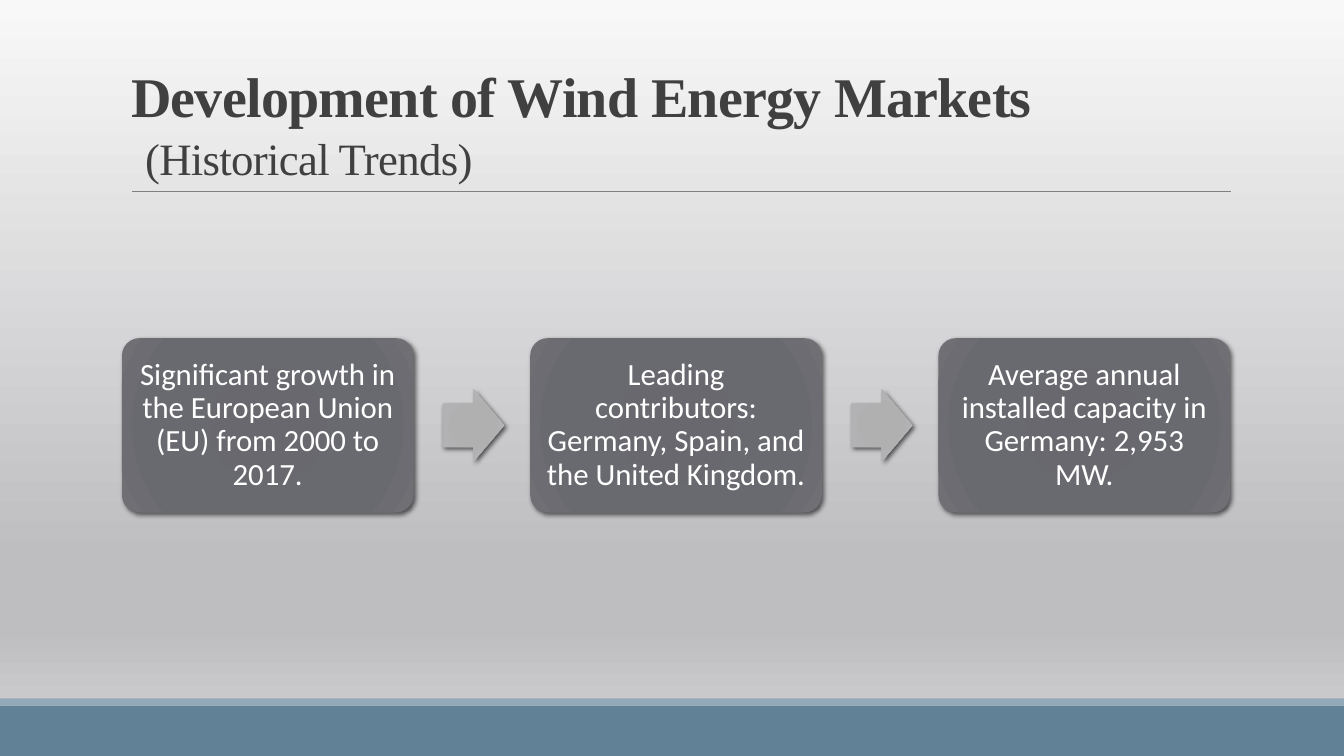
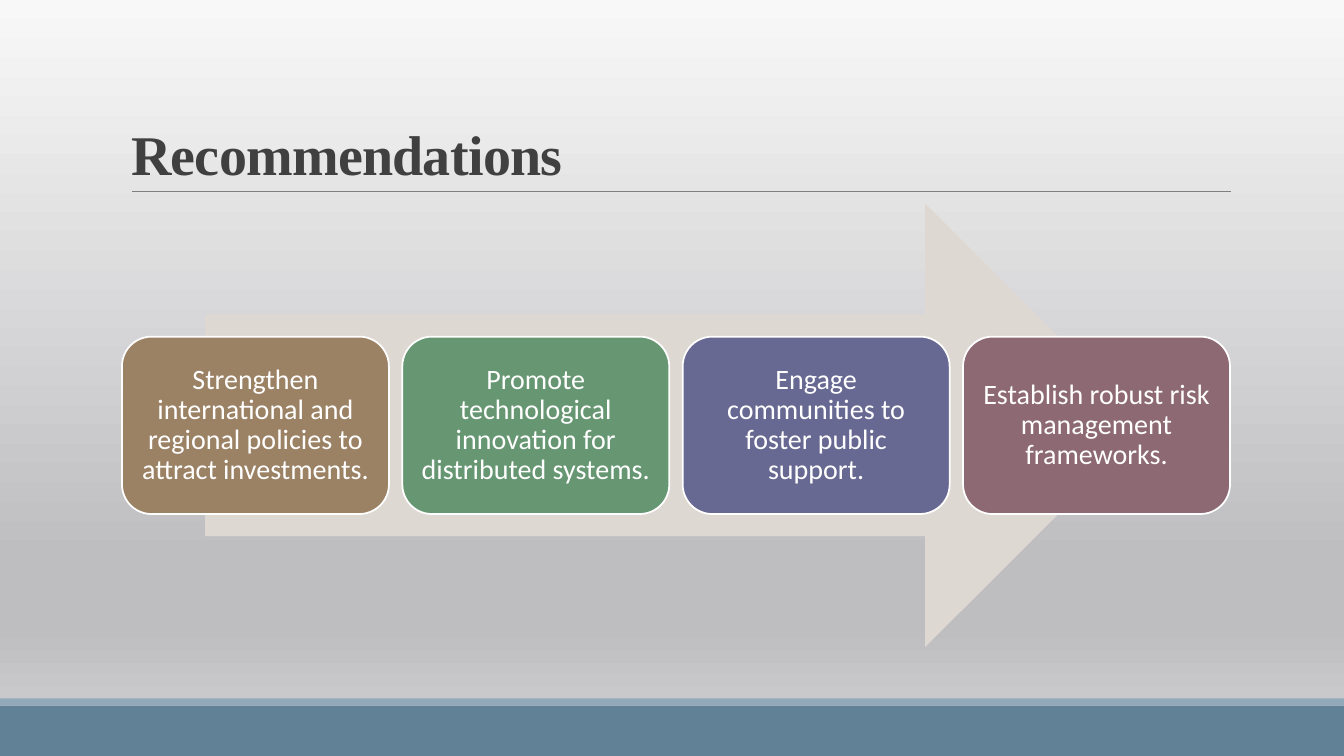
"""Build two wind energy slides: historical trends and recommendations."""
from pptx import Presentation
from pptx.dml.color import RGBColor
from pptx.enum.shapes import MSO_CONNECTOR as Connector, MSO_SHAPE as Shape
from pptx.enum.text import MSO_ANCHOR as Anchor, MSO_AUTO_SIZE as AutoSize, PP_ALIGN as Align
from pptx.oxml import parse_xml
from pptx.oxml.ns import nsdecls, qn
from pptx.util import Inches, Pt

WIDTH, HEIGHT = 13.33, 7.5
ROW_LEFT, ROW_WIDTH, ROW_MIDDLE = 1.21, 10.99, 4.22
COLORS = {
    "band": "618197", "stripe": "92A9B9", "rule": "808080", "title": "404040",
    "white": "FFFFFF", "big arrow": "DED8D3", "tan": "9C8265", "green": "669772",
    "violet": "686992", "plum": "8D6974",
}
PAGE_STOPS = {0: "F8F8F8", 74: "BEBEC1", 83: "BEBEC1", 100: "D4D4D5"}
STEP_STOPS = {0: "67676D", 34: "68686E", 70: "696970", 100: "6F6F74"}
ARROW_STOPS = {0: "AEAEB0", 34: "B0B0B1", 70: "B2B2B4", 100: "BBBBBC"}
DOWNWARD = f'<a:lin {nsdecls("a")} ang="5400000" scaled="0"/>'
RADIAL = (f'<a:path {nsdecls("a")} path="circle">'
          '<a:fillToRect l="100000" t="100000" r="100000" b="100000"/></a:path>')
SHADOW = (f'<a:outerShdw {nsdecls("a")} blurRad="{Pt(3.5)}" dist="{Pt(2)}" dir="2700000" '
          'algn="tl" rotWithShape="0"><a:srgbClr val="000000"><a:alpha val="60000"/>'
          '</a:srgbClr></a:outerShdw>')
TITLE_STYLE = (f'<a:lvl1pPr {nsdecls("a")} algn="l"><a:lnSpc><a:spcPct val="85000"/></a:lnSpc>'
               '<a:defRPr sz="4000" b="1" spc="-50"><a:solidFill>'
               f'<a:srgbClr val="{COLORS["title"]}"/></a:solidFill>'
               '<a:latin typeface="Times New Roman"/></a:defRPr></a:lvl1pPr>')


def set_gradient(fill, owner, stops, shade):
    """Fill with colour stops, given as percent to hex."""
    fill.gradient()
    gradient = next(owner.iter(qn("a:gradFill")))
    gradient.clear()
    marks = "".join(f'<a:gs pos="{spot * 1000}"><a:srgbClr val="{color}"/></a:gs>'
                    for spot, color in stops.items())
    gradient.append(parse_xml(f'<a:gsLst {nsdecls("a")}>{marks}</a:gsLst>'))
    gradient.append(parse_xml(shade))


def add_block(page, kind, area, paint, text="", size=20, inset=0.08):
    """Add a shape with a plain colour, or a shaded one with a shadow."""
    box = page.shapes.add_shape(kind, *map(Inches, area))
    box.line.fill.background()
    box.shadow.inherit = False
    if isinstance(paint, dict):
        set_gradient(box.fill, box.element, paint, RADIAL)
        next(box.element.iter(qn("a:effectLst"))).append(parse_xml(SHADOW))
    else:
        box.fill.solid()
        box.fill.fore_color.rgb = RGBColor.from_string(paint)
    if text:
        frame, para = box.text_frame, box.text_frame.paragraphs[0]
        para.text = text
        margins = {f"margin_{side}": Inches(inset) for side in ("left", "top", "right", "bottom")}
        for target, values in (
            (frame, {"word_wrap": True, "vertical_anchor": Anchor.MIDDLE, **margins}),
            (para, {"alignment": Align.CENTER, "line_spacing": 0.9}),
            (para.font, {"name": "Calibri", "size": Pt(size)}),
        ):
            for name, value in values.items():
                setattr(target, name, value)
        para.font.color.rgb = RGBColor.from_string(COLORS["white"])
    return box


deck = Presentation()
deck.slide_width, deck.slide_height = Inches(WIDTH), Inches(HEIGHT)
layout = deck.slide_layouts[5]
for holder in list(layout.placeholders):
    if holder.placeholder_format.idx:
        holder.element.getparent().remove(holder.element)
layout_title = layout.placeholders[0]
for name, value in {"left": 1.2, "top": 0.31, "width": 11, "height": 1.59}.items():
    setattr(layout_title, name, Inches(value))
for name, value in {"vertical_anchor": Anchor.BOTTOM, "auto_size": AutoSize.NONE,
                    "word_wrap": True}.items():
    setattr(layout_title.text_frame, name, value)
next(layout_title.element.iter(qn("a:lstStyle"))).append(parse_xml(TITLE_STYLE))
set_gradient(layout.background.fill, layout.element, PAGE_STOPS, DOWNWARD)

trends, advice = [deck.slides.add_slide(layout) for _ in range(2)]

band = add_block(trends, Shape.RECTANGLE, (0, 7, WIDTH, 0.5), COLORS["band"])
stripe = add_block(trends, Shape.RECTANGLE, (0, 6.93, WIDTH, 0.07), COLORS["stripe"])
rule = trends.shapes.add_connector(
    Connector.STRAIGHT, *map(Inches, (1.31, 1.9, 12.21, 1.9)))
rule.line.color.rgb = RGBColor.from_string(COLORS["rule"])
rule.line.width = Pt(0.5)
rule.element.spPr.append(parse_xml(f'<a:effectLst {nsdecls("a")}/>'))
for part in (band, stripe, rule):
    layout.shapes.element.append(part.element)

heading = trends.shapes.title.text_frame.paragraphs[0]
heading.text = "Development of Wind Energy Markets\v "
span = heading.add_run()
span.text = "(Historical Trends)"
span.font.size, span.font.bold = Pt(32), False

steps = [
    "Significant growth in the European Union (EU) from 2000 to 2017.",
    "Leading contributors: Germany, Spain, and the United Kingdom.",
    "Average annual installed capacity in Germany: 2,953 MW.",
]
step_width, step_height = ROW_WIDTH / 3.8, 1.73
arrow_width, arrow_height = 0.61, 0.72
for column, text in enumerate(steps):
    left = ROW_LEFT + column * 1.4 * step_width
    if column:
        arrow = add_block(
            trends, Shape.RIGHT_ARROW,
            (left - 0.3 * step_width, ROW_MIDDLE - arrow_height / 2, arrow_width, arrow_height),
            ARROW_STOPS)
        arrow.adjustments[0] = 0.6
    step = add_block(
        trends, Shape.ROUNDED_RECTANGLE,
        (left, ROW_MIDDLE - step_height / 2, step_width, step_height),
        STEP_STOPS, text, 22, 0.09)
    step.adjustments[0] = 0.1

advice.shapes.title.text_frame.text = "Recommendations"
cards = {
    "tan": "Strengthen international and regional policies to attract investments.",
    "green": "Promote technological innovation for distributed systems.",
    "violet": "Engage communities to foster public support.",
    "plum": "Establish robust risk management frameworks.",
}
big_width, big_height = 0.85 * ROW_WIDTH, 4.4
add_block(advice, Shape.RIGHT_ARROW,
          (ROW_LEFT + (ROW_WIDTH - big_width) / 2, ROW_MIDDLE - big_height / 2,
           big_width, big_height), COLORS["big arrow"])
card_width, card_height = ROW_WIDTH / 4.15, 0.4 * big_height
for column, (color, text) in enumerate(cards.items()):
    card = add_block(
        advice, Shape.ROUNDED_RECTANGLE,
        (ROW_LEFT + column * 1.05 * card_width, ROW_MIDDLE - card_height / 2,
         card_width, card_height), COLORS[color], text)
    card.line.color.rgb = RGBColor.from_string(COLORS["white"])
    card.line.width = Pt(1.25)

deck.save("out.pptx")
